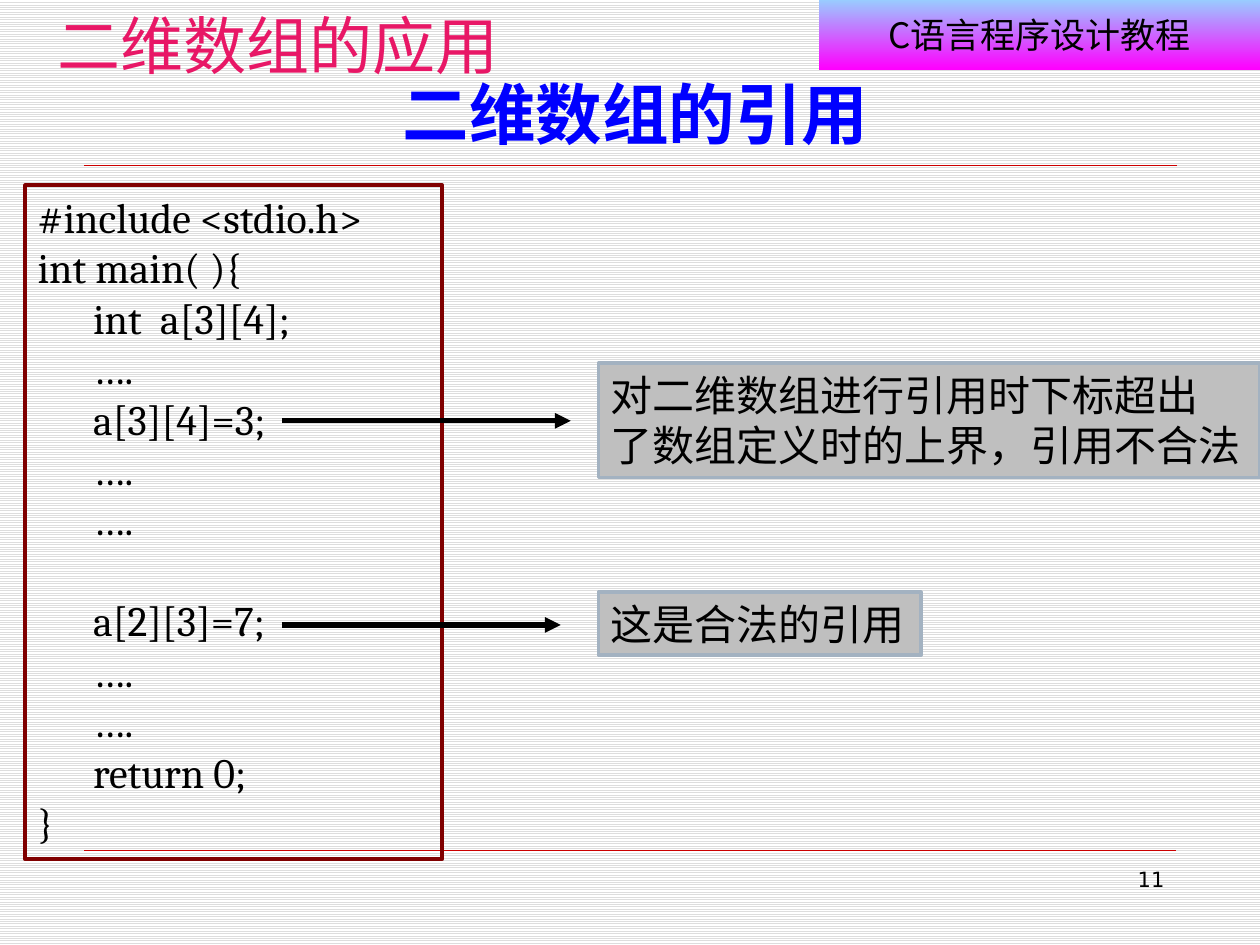
from lxml import etree
from pptx import Presentation, util as u
from pptx.dml.color import RGBColor
from pptx.enum import dml, shapes, text
from pptx.oxml import ns

SANS = "DejaVu Sans"
CODE = [
    "#include <stdio.h>", "int main( ){", "      int  a[3][4];", "      ….",
    "      a[3][4]=3;", "      ….", "      ….", "      a[2][3]=7;",
    "      ….", "      ….", "      return 0;", "}",
]
BLACK, RED, MAROON, SILVER = "000000", "CC0000", "800000", "BFBFBF"


def color(value):
    return RGBColor.from_string(value)


def inches(values):
    return [u.Inches(value) for value in values]


def write(box, lines, size, font=SANS, tint=BLACK, bold=False, align="LEFT",
          anchor="TOP", wrap=True, gaps=None):
    frame = box.text_frame
    frame.word_wrap = wrap
    frame.vertical_anchor = getattr(text.MSO_ANCHOR, anchor)
    for index, line in enumerate(lines):
        para = frame.paragraphs[0] if index == 0 else frame.add_paragraph()
        para.alignment = getattr(text.PP_ALIGN, align)
        if gaps and line in gaps:
            para.space_before = u.Pt(gaps[line])
        span = para.add_run()
        span.text = line
        formats = {"name": font, "size": u.Pt(size), "bold": bold}
        for name, value in formats.items():
            setattr(span.font, name, value)
        span.font.color.rgb = color(tint)
        properties = span.font._element
        etree.SubElement(properties, ns.qn("a:ea"), typeface=font)


def add_label(page, place, line, size, **formats):
    box = page.shapes.add_textbox(*inches(place))
    write(box, [line], size, **formats)


def add_panel(page, place, lines, size, fill=None, line=None, width=2, **formats):
    box = page.shapes.add_shape(shapes.MSO_SHAPE.RECTANGLE, *inches(place))
    box.shadow.inherit = False
    if fill:
        box.fill.solid()
        box.fill.fore_color.rgb = color(fill)
    else:
        box.fill.background()
    if line:
        box.line.color.rgb = color(line)
        box.line.width = u.Pt(width)
    else:
        box.line.fill.background()
    write(box, lines, size, **formats)
    return box


def add_line(page, start, end, tint, width, arrow=False):
    line = page.shapes.add_connector(
        shapes.MSO_CONNECTOR.STRAIGHT, *inches(start + end))
    line.line.color.rgb = color(tint)
    line.line.width = u.Pt(width)
    if arrow:
        etree.SubElement(line.line._get_or_add_ln(), ns.qn("a:tailEnd"), type="triangle")
    etree.SubElement(line._element.spPr, ns.qn("a:effectLst"))


def set_background(page):
    fill = page.background.fill
    fill.patterned()
    fill.pattern = dml.MSO_PATTERN.LIGHT_HORIZONTAL
    fill.fore_color.rgb = color("DDDDDD")
    fill.back_color.rgb = color("FFFFFF")


def set_gradient(box, tints, angle):
    box.fill.gradient()
    box.fill.gradient_angle = angle
    for stop, tint in zip(box.fill.gradient_stops, tints):
        stop.color.rgb = color(tint)


def main():
    deck = Presentation()
    deck.slide_width, deck.slide_height = inches((10, 7.5))
    page = deck.slides.add_slide(deck.slide_layouts[6])
    set_background(page)

    add_line(page, (0.67, 6.75), (9.33, 6.75), RED, 0.25)
    banner = add_panel(page, (6.5, 0, 3.5, 0.55), ["C语言程序设计教程"], 20,
                       font="Noto Sans CJK SC", align="CENTER", anchor="MIDDLE")
    set_gradient(banner, ("99CCFF", "FF00FF"), 270)
    add_label(page, (0.2, 0, 4.02, 0.41), "二维数组的应用", 36,
              font="Noto Sans CJK JP", tint="E81766", align="CENTER", wrap=False)
    add_line(page, (0.67, 1.31), (9.34, 1.31), RED, 0.25)
    add_label(page, (0.67, 0.52, 8.75, 0.74), "二维数组的引用", 38,
              tint="0000FF", bold=True, align="CENTER", anchor="BOTTOM")
    add_label(page, (7.17, 6.83, 2.17, 0.52), "11", 12, align="RIGHT")

    add_panel(page, (0.2, 1.47, 3.31, 5.35), CODE, 24, line=MAROON, width=2.25,
              font="Cambria", gaps={"      a[2][3]=7;": 29})
    notes = [
        (2.88, 5.25, 0.91, ["对二维数组进行引用时下标超出", "了数组定义时的上界，引用不合法"]),
        (4.7, 2.56, 0.5, ["这是合法的引用"]),
    ]
    for top, width, height, lines in notes:
        add_panel(page, (4.75, top, width, height), lines, 24, fill=SILVER,
                  line="A3B2C1", wrap=False)
    for right, level in ((4.53, 3.34), (4.45, 4.96)):
        add_line(page, (2.24, level), (right, level), BLACK, 3, arrow=True)

    deck.save("out.pptx")


if __name__ == "__main__":
    main()
